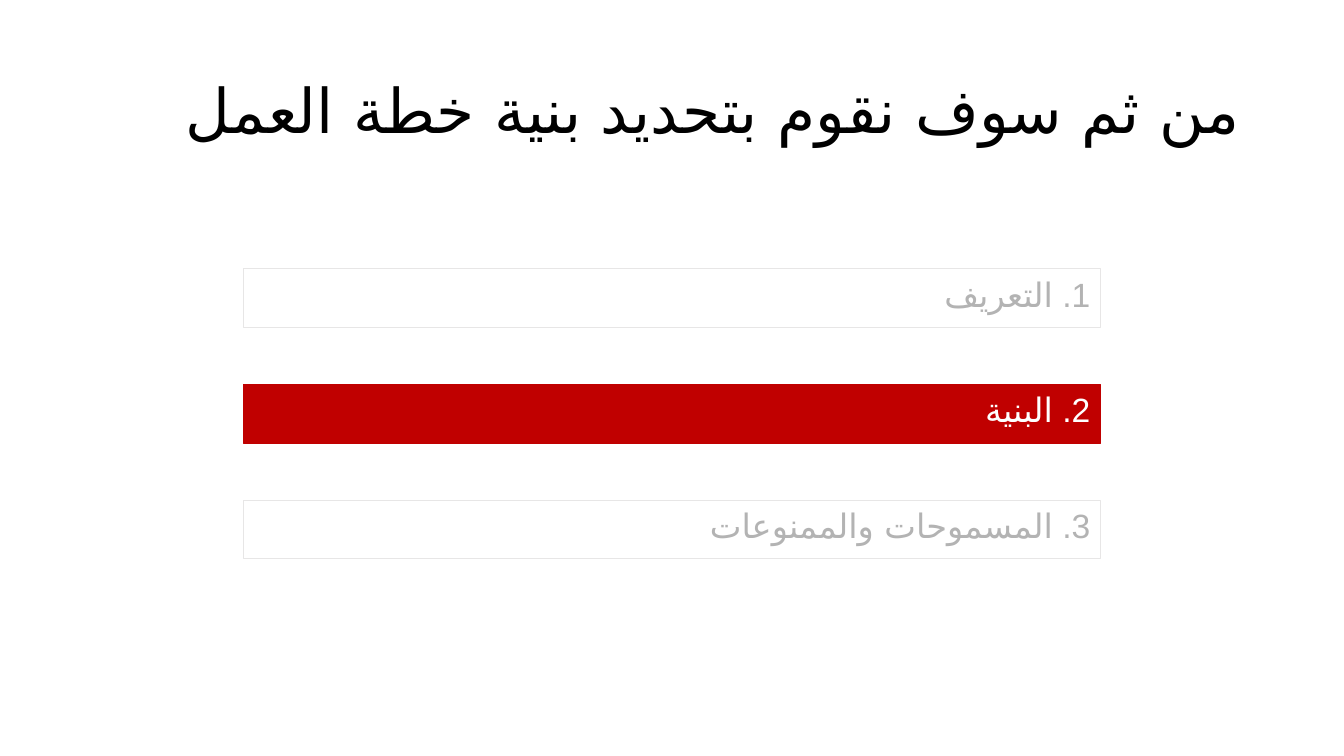
import pptx
import pptx.dml.color
import pptx.enum.shapes
import pptx.enum.text
import pptx.oxml
import pptx.oxml.ns
import pptx.util

Pt = pptx.util.Pt
Anchor = pptx.enum.text.MSO_ANCHOR


def color(code):
    return pptx.dml.color.RGBColor.from_string(code)


def write(frame, parts, size, font, ink, anchor=Anchor.TOP, space=None):
    """Fill the frame with one right-to-left paragraph of (text, script font) parts."""
    frame.word_wrap = True
    frame.vertical_anchor = anchor
    par = frame.paragraphs[0]
    par.alignment = pptx.enum.text.PP_ALIGN.RIGHT
    par.line_spacing = space
    par._p.get_or_add_pPr().set("rtl", "1")
    for text, face in parts:
        run = par.add_run()
        run.text = text
        run.font.size = Pt(size)
        run.font.name = font
        run.font.color.rgb = color(ink)
        script = pptx.oxml.parse_xml(f'<a:cs {pptx.oxml.ns.nsdecls("a")} typeface="{face}"/>')
        run._r.get_or_add_rPr().append(script)


class Deck:
    red, white, black = "C00000", "FFFFFF", "000000"
    edge, pale = "E7E6E6", "B3B3B3"
    arab = "DejaVu Sans"

    def __init__(self, show):
        self.slide = show.slides.add_slide(show.slide_layouts[6])

    def title(self, text, x, y, w, h):
        box = self.slide.shapes.add_textbox(Pt(x), Pt(y), Pt(w), Pt(h))
        write(box.text_frame, [(text, self.arab)], size=44, font="Calibri",
              ink=self.black, anchor=Anchor.MIDDLE, space=0.9)

    def step(self, num, text, x, y, w, h, active):
        kind = pptx.enum.shapes.MSO_SHAPE.RECTANGLE
        bar = self.slide.shapes.add_shape(kind, Pt(x), Pt(y), Pt(w), Pt(h))
        bar.shadow.inherit = False
        if active:
            bar.fill.solid()
            bar.fill.fore_color.rgb = color(self.red)
        else:
            bar.fill.background()
        bar.line.color.rgb = color(self.red if active else self.edge)
        bar.line.width = Pt(0.75)
        write(bar.text_frame, [(f"{num}. ", "Arial"), (text, self.arab)], size=24,
              font="Arial", ink=self.white if active else self.pale)


def main():
    show = pptx.Presentation()
    show.slide_width, show.slide_height = Pt(960), Pt(540)
    deck = Deck(show)
    deck.title("من ثم سوف نقوم بتحديد بنية خطة العمل ", 66, 28.75, 828, 104.4)
    steps = ["التعريف ", "البنية ", "المسموحات والممنوعات "]
    for i, text in enumerate(steps):
        deck.step(i + 1, text, 174, 192 + 82.6 * i, 612, 42, active=i == 1)
    show.save("out.pptx")


if __name__ == "__main__":
    main()
